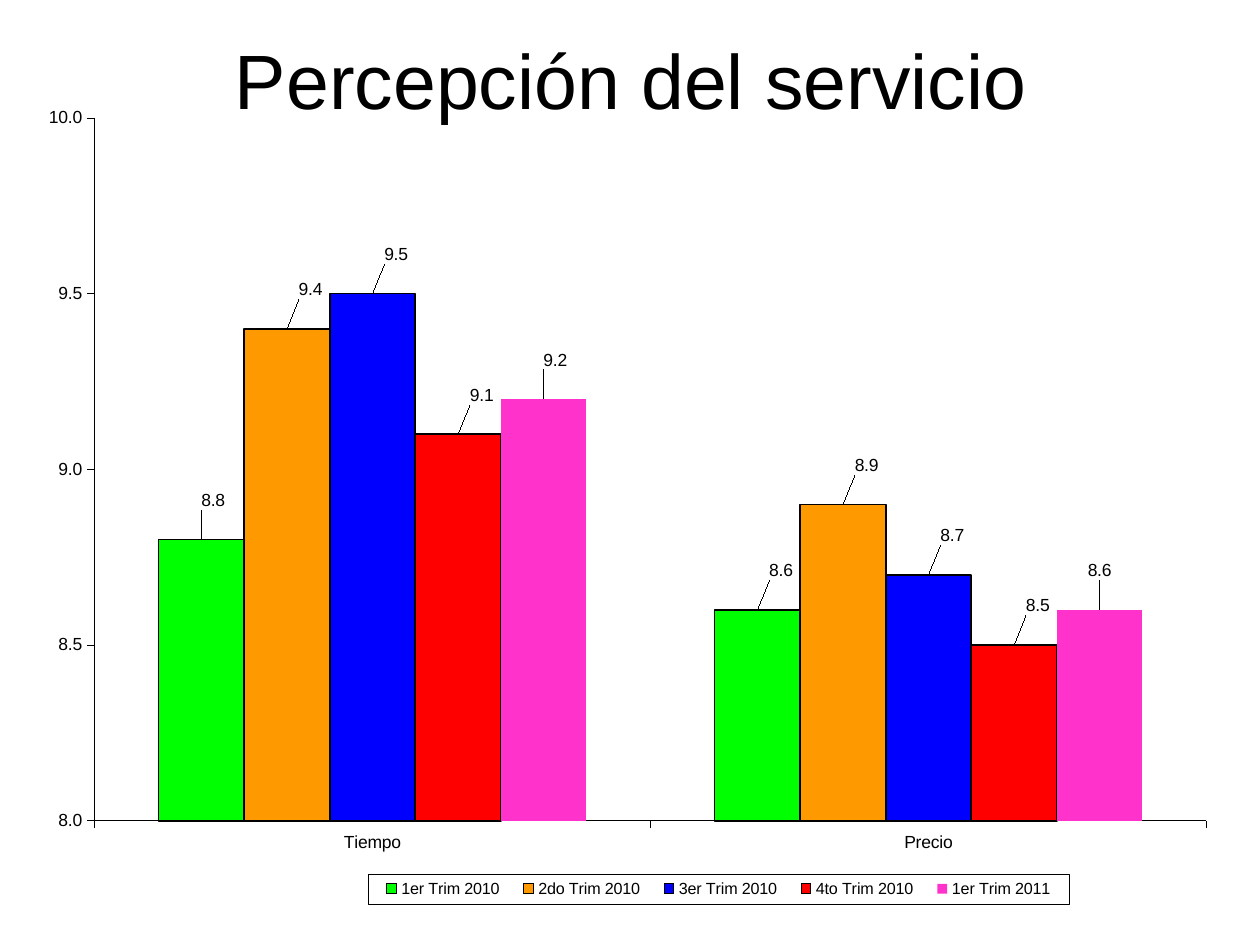
"""Build a slide with a clustered column chart of service perception by quarter."""
from pptx import Presentation
from pptx import util as u
from pptx.chart import data as cd
from pptx.dml.color import RGBColor
from pptx.enum import chart as ec, text
from pptx.oxml import parse_xml
from pptx.oxml.ns import nsdecls, qn

BLACK = RGBColor(0, 0, 0)
WHITE = RGBColor(255, 255, 255)
GREEN = RGBColor(0, 255, 0)
ORANGE = RGBColor(255, 153, 0)
BLUE = RGBColor(0, 0, 255)
RED = RGBColor(255, 0, 0)
PINK = RGBColor(255, 51, 204)
FACE = "Arial"


def layout(inner=False, edge=False, **sizes):
    """Return a manual chart layout."""
    tags = '<c:layoutTarget val="inner"/>' if inner else ""
    if edge:
        tags += '<c:xMode val="edge"/><c:yMode val="edge"/>'
    tags += "".join(f'<c:{key} val="{val}"/>' for key, val in sizes.items())
    return parse_xml(f'<c:layout {nsdecls("c")}><c:manualLayout>{tags}</c:manualLayout></c:layout>')


def style(font, size):
    """Set face, size and colour of a font."""
    font.name, font.size = FACE, u.Pt(size)
    font.color.rgb = BLACK


deck = Presentation()
deck.slide_width, deck.slide_height = u.Inches(10), u.Inches(7.5)
slide = deck.slides.add_slide(deck.slide_layouts[5])

title = slide.shapes.title
title.left, title.top = u.Inches(0.51), u.Inches(0)
title.width, title.height = u.Inches(9), u.Inches(1.25)
title.fill.solid()
title.fill.fore_color.rgb = WHITE
title.text_frame.vertical_anchor = text.MSO_ANCHOR.MIDDLE
para = title.text_frame.paragraphs[0]
para.alignment = text.PP_ALIGN.CENTER
run = para.add_run()
run.text = "Percepción del servicio"
style(run.font, 44)

rows = [
    ("1er Trim 2010", (8.8, 8.6), GREEN, (0.01, 0.02)),
    ("2do Trim 2010", (9.4, 8.9), ORANGE, (0.02, 0.02)),
    ("3er Trim 2010", (9.5, 8.7), BLUE, (0.02, 0.02)),
    ("4to Trim 2010", (9.1, 8.5), RED, (0.02, 0.02)),
    ("1er Trim 2011", (9.2, 8.6), PINK, (0.01, 0)),
]
data = cd.CategoryChartData(number_format="0.0")
data.categories = ["Tiempo", "Precio"]
for name, vals, color, shifts in rows:
    data.add_series(name, vals)

frame = slide.shapes.add_chart(
    ec.XL_CHART_TYPE.COLUMN_CLUSTERED,
    u.Inches(0.28), u.Inches(0.84), u.Inches(9.39), u.Inches(6.39), data)
chart = frame.chart
chart.has_title = False
style(chart.font, 10)

plot = chart.plots[0]
plot.gap_width, plot.overlap = 150, 0
plot.vary_by_categories = False
area = chart._chartSpace.chart.plotArea
for old in area.findall(qn("c:layout")):
    area.remove(old)
area.insert(0, layout(inner=True, edge=True, x=0.05, y=0.015, w=0.94, h=0.873))

for series, (name, vals, color, shifts) in zip(plot.series, rows):
    series.format.fill.solid()
    series.format.fill.fore_color.rgb = color
    if color == PINK:
        series.format.line.fill.background()
    else:
        series.format.line.color.rgb = BLACK
        series.format.line.width = u.Pt(1)
    labels = series.data_labels
    labels.show_value = True
    labels.number_format, labels.number_format_is_linked = "0.0", False
    style(labels.font, 10)
    for spot, shift in enumerate(shifts):
        label = series.points[spot].data_label
        label.position = ec.XL_LABEL_POSITION.OUTSIDE_END
        style(label.font, 10)
    for node, shift in zip(labels._element.findall(qn("c:dLbl")), shifts):
        node.insert(1, layout(x=shift, y=-0.03))

for axis in (chart.category_axis, chart.value_axis):
    axis.has_major_gridlines = False
    axis.major_tick_mark = ec.XL_TICK_MARK.OUTSIDE
    axis.minor_tick_mark = ec.XL_TICK_MARK.NONE
    axis.format.line.color.rgb = BLACK
    axis.format.line.width = u.Pt(0.25)
    style(axis.tick_labels.font, 10)
chart.category_axis.tick_label_position = ec.XL_TICK_LABEL_POSITION.LOW
scale = chart.value_axis
scale.minimum_scale, scale.maximum_scale, scale.major_unit = 8, 10, 0.5
scale.tick_labels.number_format = "0.0"
scale.tick_labels.number_format_is_linked = False

chart.has_legend = True
legend = chart.legend
legend.position = ec.XL_LEGEND_POSITION.BOTTOM
legend.include_in_layout = False
style(legend.font, 9.2)
box = legend._element
for old in box.findall(qn("c:layout")):
    box.remove(old)
box.find(qn("c:legendPos")).addnext(layout(edge=True, x=0.281, y=0.954, w=0.593, h=0.037))
box.find(qn("c:txPr")).addprevious(parse_xml(
    f'<c:spPr {nsdecls("c", "a")}><a:solidFill><a:srgbClr val="{WHITE}"/></a:solidFill>'
    f'<a:ln w="3175"><a:solidFill><a:srgbClr val="{BLACK}"/></a:solidFill></a:ln></c:spPr>'))

deck.save("out.pptx")
